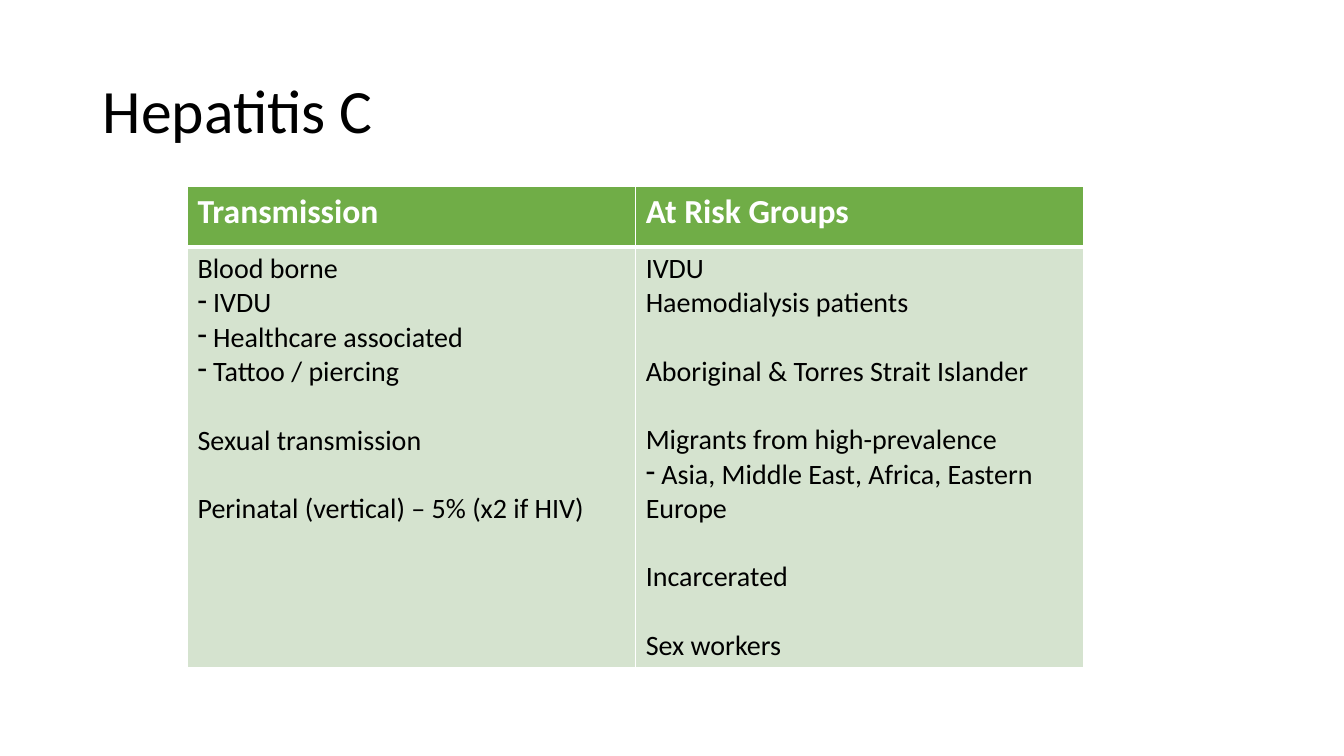
from dataclasses import dataclass

from lxml.etree import SubElement
from pptx import Presentation
from pptx.dml.color import RGBColor
from pptx.enum.text import MSO_ANCHOR, PP_ALIGN
from pptx.oxml.ns import qn
from pptx.slide import Slide
from pptx.table import _Cell
from pptx.text.text import _Paragraph
from pptx.util import Inches, Pt

FONT = "Calibri"
BLACK = RGBColor(0x00, 0x00, 0x00)
WHITE = RGBColor(0xFF, 0xFF, 0xFF)
GREEN = RGBColor(0x70, 0xAD, 0x47)
PALE_GREEN = RGBColor(0xD5, 0xE3, 0xCF)
GROUP_GAP = Pt(24.4)  # one line of 20 pt body text


@dataclass(frozen=True)
class Entry:
    text: str
    dashed: bool = False
    starts_group: bool = False


@dataclass(frozen=True)
class Topic:
    heading: str
    entries: tuple[Entry, ...]


@dataclass(frozen=True)
class CellStyle:
    size: int
    bold: bool
    color: RGBColor
    fill: RGBColor
    top_border: int
    bottom_border: int


HEADING_STYLE = CellStyle(24, True, WHITE, GREEN, 1, 3)
BODY_STYLE = CellStyle(20, False, BLACK, PALE_GREEN, 3, 1)

TOPICS = (
    Topic("Transmission", (
        Entry("Blood borne"),
        Entry(" IVDU", dashed=True),
        Entry(" Healthcare associated", dashed=True),
        Entry(" Tattoo / piercing", dashed=True),
        Entry("Sexual transmission", starts_group=True),
        Entry("Perinatal (vertical) – 5% (x2 if HIV)", starts_group=True),
    )),
    Topic("At Risk Groups", (
        Entry("IVDU"),
        Entry("Haemodialysis patients"),
        Entry("Aboriginal & Torres Strait Islander", starts_group=True),
        Entry("Migrants from high-prevalence", starts_group=True),
        Entry(" Asia, Middle East, Africa, Eastern Europe", dashed=True),
        Entry("Incarcerated", starts_group=True),
        Entry("Sex workers", starts_group=True),
    )),
)


def format_runs(paragraph: _Paragraph, size: int, bold: bool, color: RGBColor) -> None:
    for run in paragraph.runs:
        run.font.name = FONT
        run.font.size = Pt(size)
        run.font.bold = bold
        run.font.color.rgb = color


def add_dash(paragraph: _Paragraph) -> None:
    properties = paragraph._p.get_or_add_pPr()
    properties.set("marL", "0")
    properties.set("indent", "0")
    SubElement(properties, qn("a:buChar"), char="-")


def add_borders(cell: _Cell, style: CellStyle) -> None:
    properties = cell._tc.get_or_add_tcPr()
    widths = {"L": 1, "R": 1, "T": style.top_border, "B": style.bottom_border}
    for side, width in widths.items():
        line = SubElement(properties, qn(f"a:ln{side}"), w=str(Pt(width)))
        SubElement(SubElement(line, qn("a:solidFill")), qn("a:srgbClr"), val=str(WHITE))


def fill_cell(cell: _Cell, entries: tuple[Entry, ...], style: CellStyle) -> None:
    add_borders(cell, style)
    cell.fill.solid()
    cell.fill.fore_color.rgb = style.fill
    cell.text_frame.text = "\n".join(entry.text for entry in entries)
    for paragraph, entry in zip(cell.text_frame.paragraphs, entries):
        format_runs(paragraph, style.size, style.bold, style.color)
        if entry.starts_group:
            paragraph.space_before = GROUP_GAP
        if entry.dashed:
            add_dash(paragraph)


def add_title(slide: Slide, text: str) -> None:
    title = slide.shapes.title
    title.left, title.top = Inches(0.92), Inches(0.4)
    title.width, title.height = Inches(11.5), Inches(1.45)
    title.text_frame.text = text
    title.text_frame.vertical_anchor = MSO_ANCHOR.MIDDLE
    paragraph = title.text_frame.paragraphs[0]
    paragraph.alignment = PP_ALIGN.LEFT
    paragraph.line_spacing = 0.9
    format_runs(paragraph, 44, False, BLACK)


def add_topic_table(slide: Slide) -> None:
    table = slide.shapes.add_table(
        2, len(TOPICS), Inches(1.86), Inches(1.85), Inches(8.89), Inches(4.7)
    ).table
    table.horz_banding = False
    table.rows[0].height = Inches(0.6)
    table.rows[1].height = Inches(4.1)
    for column, topic in enumerate(TOPICS):
        fill_cell(table.cell(0, column), (Entry(topic.heading),), HEADING_STYLE)
        fill_cell(table.cell(1, column), topic.entries, BODY_STYLE)


def main() -> None:
    presentation = Presentation()
    presentation.slide_width = Inches(13.33)
    presentation.slide_height = Inches(7.5)
    slide = presentation.slides.add_slide(presentation.slide_layouts[5])
    add_topic_table(slide)
    add_title(slide, "Hepatitis C")
    presentation.save("out.pptx")


if __name__ == "__main__":
    main()
